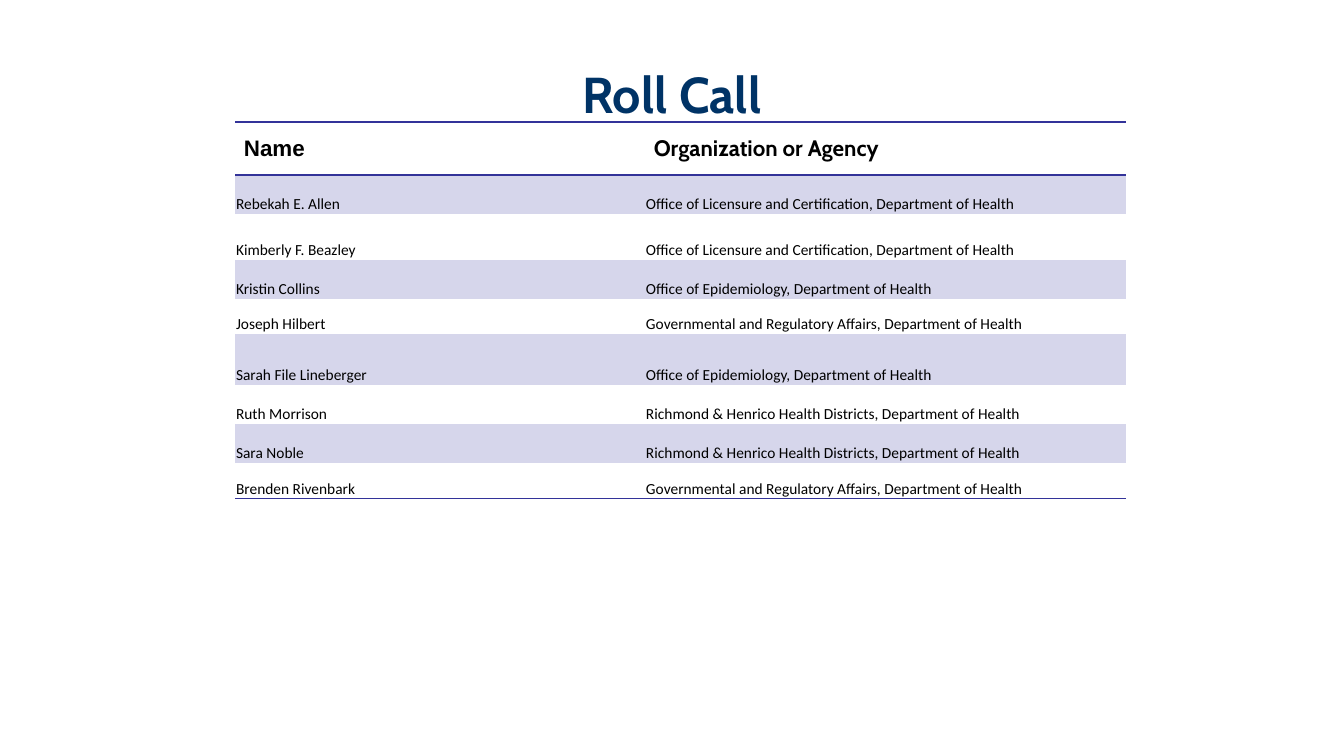
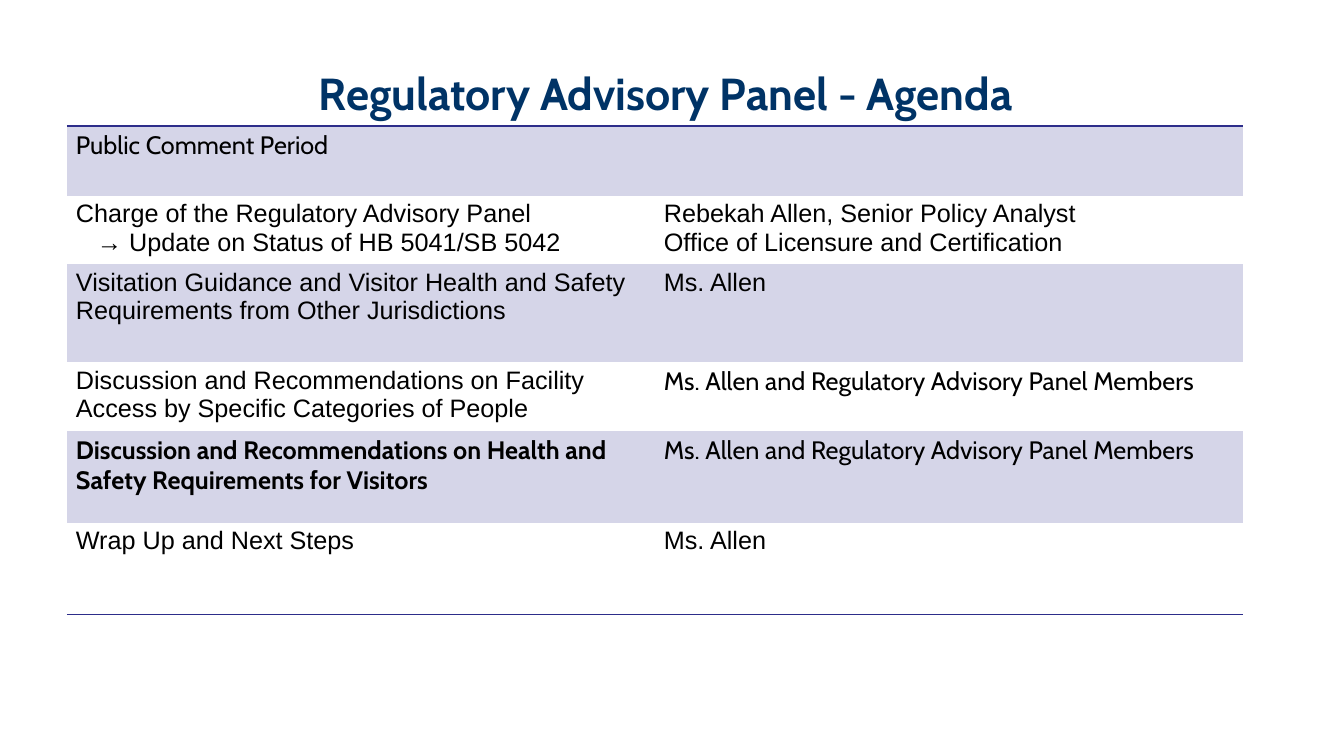
import pptx
import pptx.dml.color
import pptx.enum.text
import pptx.oxml
import pptx.oxml.ns
import pptx.util
from lxml import etree

RGB = pptx.dml.color.RGBColor
ANCHOR = pptx.enum.text.MSO_ANCHOR
qn = pptx.oxml.ns.qn

PX = 914400 / 100.8
SLIDE_SIZE = (1344, 756)
TITLE_TOP, TITLE_WIDTH, TITLE_HEIGHT = 30, 1210, 126
CELL_INSETS = (9, 4, 9, 4)
TIGHT_INSETS = (1, 1, 1, 0)
ARROW_INDENT = 21
NO_TABLE_STYLE = "{2D5ABB26-0587-4C30-8999-92F81FD0307C}"

NAVY = RGB(0x00, 0x33, 0x66)
BLACK = RGB(0x00, 0x00, 0x00)
ROLL_RULE = RGB(0x33, 0x33, 0x99)
ROLL_BAND = RGB(0xD6, 0xD6, 0xEB)
AGENDA_RULE = RGB(0x2D, 0x2D, 0x8A)
AGENDA_BAND = RGB(0xD5, 0xD5, 0xE8)

LICENSURE = "Office of Licensure and Certification, Department of Health"
EPIDEMIOLOGY = "Office of Epidemiology, Department of Health"
AFFAIRS = "Governmental and Regulatory Affairs, Department of Health"
DISTRICTS = "Richmond & Henrico Health Districts, Department of Health"
PANEL = "Ms. Allen and Regulatory Advisory Panel Members"

# Row height, name, organization
ROLL_HEADER = (53, "Name", "Organization or Agency")
ROLL = [
    (39, "Rebekah E. Allen", LICENSURE),
    (46, "Kimberly F. Beazley", LICENSURE),
    (39, "Kristin Collins", EPIDEMIOLOGY),
    (35, "Joseph Hilbert", AFFAIRS),
    (51, "Sarah File Lineberger", EPIDEMIOLOGY),
    (39, "Ruth Morrison", DISTRICTS),
    (39, "Sara Noble", DISTRICTS),
    (36, "Brenden Rivenbark", AFFAIRS),
]

# Row height, then (lines, font, bold) for the topic and the speaker
AGENDA = [
    (70, (["Public Comment Period"], "Cabin", False), None),
    (66, (["Charge of the Regulatory Advisory Panel",
           "→ Update on Status of HB 5041/SB 5042"], "Arial", False),
     (["Rebekah Allen, Senior Policy Analyst",
       "Office of Licensure and Certification"], "Arial", False)),
    (98, (["Visitation Guidance and Visitor Health and Safety "
           "Requirements from Other Jurisdictions"], "Arial", False),
     (["Ms. Allen"], "Arial", False)),
    (66, (["Discussion and Recommendations on Facility "
           "Access by Specific Categories of People"], "Arial", False),
     ([PANEL], "Cabin", False)),
    (92, (["Discussion and Recommendations on Health and "
           "Safety Requirements for Visitors"], "Cabin", True),
     ([PANEL], "Cabin", False)),
    (92, (["Wrap Up and Next Steps"], "Arial", False),
     (["Ms. Allen"], "Arial", False)),
]


def px(length):
    return pptx.util.Emu(round(length * PX))


def add_run(paragraph, text, font, size, bold, color):
    run = paragraph.add_run()
    run.text = text
    run.font.name = font
    run.font.size = pptx.util.Pt(size)
    run.font.bold = bold
    run.font.color.rgb = color


def add_titled_slide(deck, title, size, center):
    slide = deck.slides.add_slide(deck.slide_layouts[6])
    box = slide.shapes.add_textbox(px(center - TITLE_WIDTH / 2), px(TITLE_TOP),
                                   px(TITLE_WIDTH), px(TITLE_HEIGHT))
    frame = box.text_frame
    frame.word_wrap = True
    frame.vertical_anchor = ANCHOR.MIDDLE
    paragraph = frame.paragraphs[0]
    paragraph.alignment = pptx.enum.text.PP_ALIGN.CENTER
    add_run(paragraph, title, "Cabin", size, True, NAVY)
    return slide


def add_plain_table(slide, left, top, widths, heights):
    """Add a table without the default banded style."""
    table = slide.shapes.add_table(len(heights), len(widths), px(left), px(top),
                                   px(sum(widths)), px(sum(heights))).table
    table.first_row = table.horz_banding = False
    table._tbl.tblPr.find(qn("a:tableStyleId")).text = NO_TABLE_STYLE
    for column, width in zip(table.columns, widths):
        column.width = px(width)
    for row, height in zip(table.rows, heights):
        row.height = px(height)
    return table


def fill_cell(cell, lines, font, size, bold, insets, anchor):
    (cell.margin_left, cell.margin_top,
     cell.margin_right, cell.margin_bottom) = map(px, insets)
    cell.vertical_anchor = anchor
    for index, line in enumerate(lines):
        frame = cell.text_frame
        paragraph = frame.add_paragraph() if index else frame.paragraphs[0]
        if line.startswith("→"):
            paragraph._p.get_or_add_pPr().set("marL", str(px(ARROW_INDENT)))
        add_run(paragraph, line, font, size, bold, BLACK)


def shade_rows(table, banded_remainder, band):
    for index, row in enumerate(table.rows):
        for cell in row.cells:
            if index % 2 == banded_remainder:
                cell.fill.solid()
                cell.fill.fore_color.rgb = band
            else:
                cell.fill.background()


def rule_row(row, sides, color):
    """Draw 1 pt borders; sides are "lnT" and "lnB", in that order."""
    for cell in row.cells:
        properties = cell._tc.get_or_add_tcPr()
        for position, side in enumerate(sides):
            line = etree.Element(qn(f"a:{side}"), w=str(pptx.util.Pt(1)))
            paint = etree.SubElement(line, qn("a:solidFill"))
            etree.SubElement(paint, qn("a:srgbClr"), val=str(color))
            properties.insert(position, line)


def build_roll_call(deck):
    slide = add_titled_slide(deck, "Roll Call", 36, 672)
    rows = [ROLL_HEADER] + ROLL
    table = add_plain_table(slide, 235, 122, (410, 481), [row[0] for row in rows])
    for column, (heading, font) in enumerate(zip(ROLL_HEADER[1:], ("Arial", "Cabin"))):
        fill_cell(table.cell(0, column), [heading], font, 16, True,
                  CELL_INSETS, ANCHOR.MIDDLE)
    for index, (_, *entries) in enumerate(ROLL, start=1):
        for column, entry in enumerate(entries):
            fill_cell(table.cell(index, column), [entry], "Calibri", 11, False,
                      TIGHT_INSETS, ANCHOR.BOTTOM)
    shade_rows(table, 1, ROLL_BAND)
    rule_row(table.rows[0], ("lnT", "lnB"), ROLL_RULE)
    rule_row(table.rows[len(ROLL)], ("lnB",), ROLL_RULE)


def build_agenda(deck):
    slide = add_titled_slide(deck, "Regulatory Advisory Panel - Agenda", 32, 666)
    table = add_plain_table(slide, 67, 126, (588, 588), [row[0] for row in AGENDA])
    for index, (_, topic, speaker) in enumerate(AGENDA):
        fill_cell(table.cell(index, 0), topic[0], topic[1], 18, topic[2],
                  CELL_INSETS, ANCHOR.TOP)
        if speaker:
            fill_cell(table.cell(index, 1), speaker[0], speaker[1], 18, speaker[2],
                      CELL_INSETS, ANCHOR.TOP)
        else:
            table.cell(index, 0).merge(table.cell(index, 1))
    shade_rows(table, 0, AGENDA_BAND)
    rule_row(table.rows[0], ("lnT",), AGENDA_RULE)
    rule_row(table.rows[len(AGENDA) - 1], ("lnB",), AGENDA_RULE)


def main():
    deck = pptx.Presentation()
    deck.slide_width, deck.slide_height = map(px, SLIDE_SIZE)
    build_roll_call(deck)
    build_agenda(deck)
    deck.save("out.pptx")


if __name__ == "__main__":
    main()
